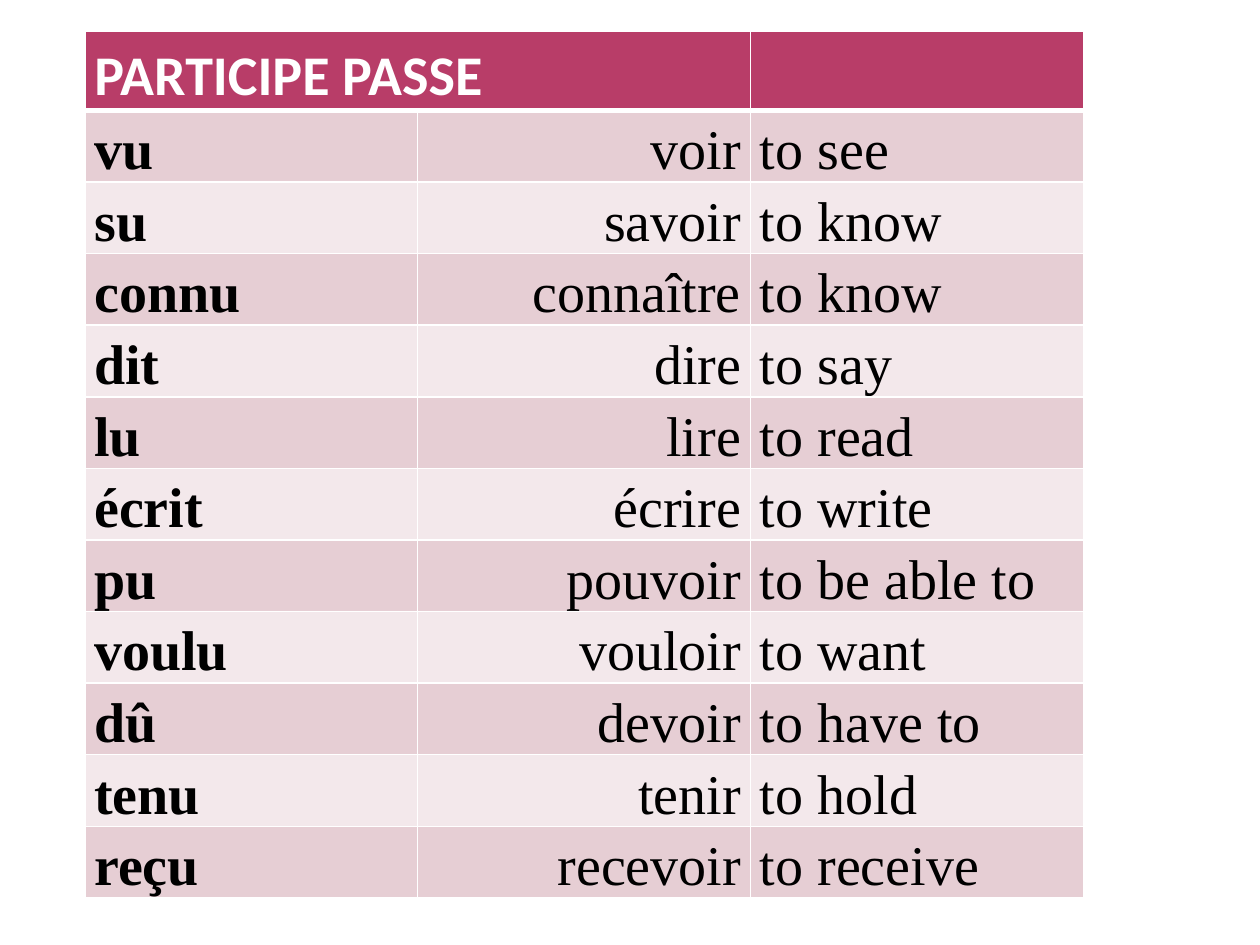
"""Build a slide with a table of French past participles."""
from lxml import etree
from pptx import Presentation, util as u
from pptx.dml.color import RGBColor
from pptx.enum import text
from pptx.oxml.ns import qn


def paint(fill, color):
    fill.solid()
    fill.fore_color.rgb = RGBColor.from_string(color)


def edge(cell, sides):
    props = cell._tc.get_or_add_tcPr()
    for spot, (side, width) in enumerate(sides.items()):
        line = etree.Element(qn("a:" + side), w=str(u.Pt(width)))
        solid = etree.SubElement(line, qn("a:solidFill"))
        etree.SubElement(solid, qn("a:srgbClr"), val="FFFFFF")
        props.insert(spot, line)


verbs = [
    ("PARTICIPE PASSE", "", ""),
    ("vu", "voir", "to see"),
    ("su", "savoir", "to know"),
    ("connu", "connaître", "to know"),
    ("dit", "dire", "to say"),
    ("lu", "lire", "to read"),
    ("écrit", "écrire", "to write"),
    ("pu", "pouvoir", "to be able to"),
    ("voulu", "vouloir", "to want"),
    ("dû", "devoir", "to have to"),
    ("tenu", "tenir", "to hold"),
    ("reçu", "recevoir", "to receive"),
]
inset = {"margin_left": u.Cm(0.19), "margin_right": u.Cm(0.19),
         "margin_top": 0, "margin_bottom": 0}
left, right = text.PP_ALIGN.LEFT, text.PP_ALIGN.RIGHT

deck = Presentation()
deck.slide_width, deck.slide_height = u.Cm(25.4), u.Cm(19.05)
slide = deck.slides.add_slide(deck.slide_layouts[6])
frame = slide.shapes.add_table(len(verbs), 3, u.Cm(1.71), u.Cm(0.64),
                               u.Cm(20.12), u.Cm(18.69))
table = frame.table
for col in table.columns:
    col.width = u.Cm(6.71)
for row in table.rows:
    row.height = u.Cm(1.04)
frame.height = u.Cm(18.69)

for r, words in enumerate(verbs):
    head = r == 0
    back = "B83D68" if head else ("F3E8EB", "E6CED4")[r % 2]
    for c, word in enumerate(words):
        cell = table.cell(r, c)
        for key, val in inset.items():
            setattr(cell, key, val)
        paint(cell.fill, back)
        edge(cell, {"lnL": 1, "lnR": 1, "lnT": 3 if r == 1 else 1,
                    "lnB": 3 if head else 1})
        if not word:
            continue
        para = cell.text_frame.paragraphs[0]
        para.alignment = right if c == 1 else left
        para.line_spacing = 1.15
        run = para.add_run()
        run.text = word
        style = {"size": u.Pt(32), "bold": c == 0,
                 "name": "Calibri" if head else "Times New Roman"}
        for key, val in style.items():
            setattr(run.font, key, val)
        paint(run.font.fill, "FFFFFF" if head else "000000")

table.cell(0, 0).merge(table.cell(0, 1))
deck.save("out.pptx")
